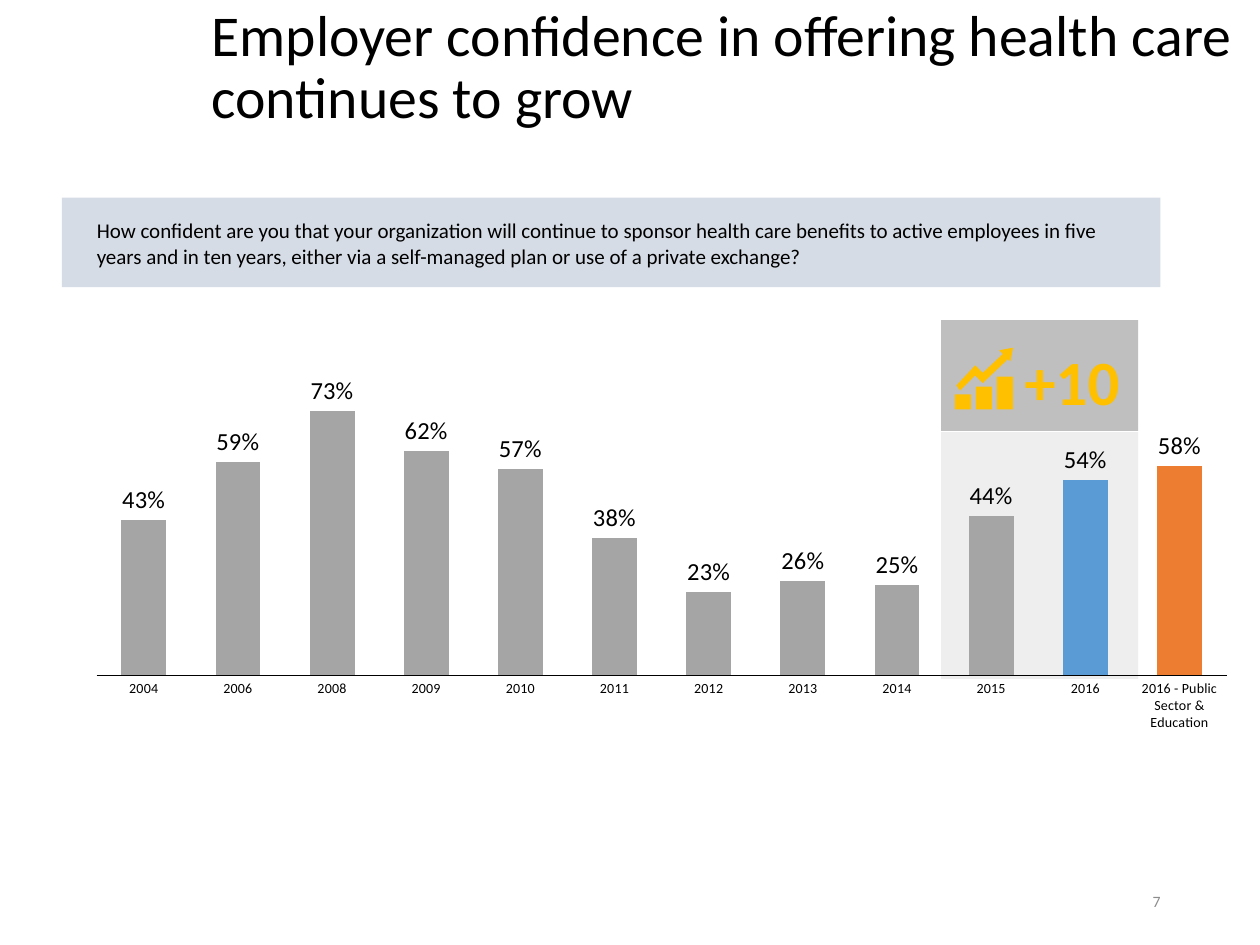
from dataclasses import dataclass

import pptx
import pptx.chart.data
import pptx.dml.color
import pptx.enum.chart
import pptx.enum.shapes
import pptx.enum.text
import pptx.oxml
import pptx.util
from pptx.util import Pt

FONT = "Calibri"
BLACK, GRAY, GOLD = "000000", "A5A5A5", "FFC000"
ALIGN = pptx.enum.text.PP_ALIGN
ANCHOR = pptx.enum.text.MSO_ANCHOR


@dataclass
class Area:
    left: float
    top: float
    width: float
    height: float

    def lengths(self):
        return Pt(self.left), Pt(self.top), Pt(self.width), Pt(self.height)


@dataclass
class TextStyle:
    size: float
    color: str = BLACK
    bold: bool = False
    align: ALIGN = ALIGN.LEFT
    anchor: ANCHOR = ANCHOR.TOP
    line_spacing: float = 1.0


def rgb(color: str):
    return pptx.dml.color.RGBColor.from_string(color)


def paint(shape, color: str):
    shape.shadow.inherit = False
    shape.fill.solid()
    shape.fill.fore_color.rgb = rgb(color)
    shape.line.fill.background()


def add_rectangle(page, area: Area, color: str):
    box = page.shapes.add_shape(pptx.enum.shapes.MSO_SHAPE.RECTANGLE, *area.lengths())
    paint(box, color)
    return box


def write(box, text: str, style: TextStyle):
    frame = box.text_frame
    frame.word_wrap = True
    frame.vertical_anchor = style.anchor
    para = frame.paragraphs[0]
    para.text = text
    para.alignment = style.align
    para.line_spacing = style.line_spacing
    set_font(para.font, style.size, style.color)
    para.font.bold = style.bold


def set_font(font, size: float, color: str = BLACK):
    font.name = FONT
    font.size = Pt(size)
    font.color.rgb = rgb(color)


def add_text(page, area: Area, text: str, style: TextStyle):
    write(page.shapes.add_textbox(*area.lengths()), text, style)


def add_question(page):
    banner = add_rectangle(page, Area(35.28, 113, 627.84, 51.1), "D6DCE5")
    frame = banner.text_frame
    frame.margin_left = frame.margin_right = Pt(20)
    frame.margin_top, frame.margin_bottom = Pt(11.5), Pt(8.6)
    write(
        banner,
        "How confident are you that your organization will continue to sponsor health care "
        "benefits to active employees in five years and in ten years, either via a "
        "self-managed plan or use of a private exchange?",
        TextStyle(12),
    )


def set_plot_area(chart, x: float, y: float, width: float, height: float):
    """Fix the inner plot area, as fractions of the chart."""
    plot_area = chart._chartSpace.chart.plotArea
    for old in plot_area.findall(pptx.oxml.ns.qn("c:layout")):
        plot_area.remove(old)
    plot_area.insert(0, pptx.oxml.parse_xml(
        f'<c:layout {pptx.oxml.ns.nsdecls("c")}><c:manualLayout>'
        '<c:layoutTarget val="inner"/><c:xMode val="edge"/><c:yMode val="edge"/>'
        f'<c:x val="{x}"/><c:y val="{y}"/><c:w val="{width}"/><c:h val="{height}"/>'
        "</c:manualLayout></c:layout>"
    ))


def add_confidence_chart(page):
    confidence = {
        "2004": 0.43, "2006": 0.59, "2008": 0.73, "2009": 0.62,
        "2010": 0.57, "2011": 0.38, "2012": 0.23, "2013": 0.26,
        "2014": 0.25, "2015": 0.44, "2016": 0.54,
        "2016 - Public Sector & Education": 0.58,
    }
    highlights = {10: "5B9BD5", 11: "ED7D31"}

    data = pptx.chart.data.CategoryChartData(number_format="0%")
    data.categories = list(confidence)
    data.add_series("Series 1", list(confidence.values()))
    chart = page.shapes.add_chart(
        pptx.enum.chart.XL_CHART_TYPE.COLUMN_CLUSTERED,
        *Area(28.08, 182.88, 679.68, 236.16).lengths(),
        data,
    ).chart
    chart.has_legend = False
    chart.has_title = False
    set_font(chart.font, 14)
    set_plot_area(chart, 0.04, 0.16, 0.95, 0.7)

    values = chart.value_axis
    values.minimum_scale, values.maximum_scale, values.major_unit = 0, 0.8, 0.2
    values.has_major_gridlines = False
    values.visible = False

    years = chart.category_axis
    years.major_tick_mark = pptx.enum.chart.XL_TICK_MARK.NONE
    years.format.line.color.rgb = rgb(BLACK)
    years.format.line.width = Pt(0.75)
    set_font(years.tick_labels.font, 8)

    plot = chart.plots[0]
    plot.gap_width = 110
    plot.vary_by_categories = False
    plot.has_data_labels = True
    labels = plot.data_labels
    labels.show_value = True
    labels.number_format = "0%"
    labels.number_format_is_linked = False
    labels.position = pptx.enum.chart.XL_LABEL_POSITION.OUTSIDE_END
    set_font(labels.font, 14)

    series = plot.series[0]
    series.format.fill.solid()
    series.format.fill.fore_color.rgb = rgb(GRAY)
    for index, color in highlights.items():
        fill = series.points[index].format.fill
        fill.solid()
        fill.fore_color.rgb = rgb(color)


def add_growth_icon(page):
    baseline, bar_width = 234, 9.2
    for index, height in enumerate((8.6, 13, 18.7)):
        left = 545.6 + 12 * index
        add_rectangle(page, Area(left, baseline - height, bar_width, height), GOLD)

    arrow = [
        (557.3, 208.8), (561.6, 213.1), (573.1, 202.3), (571, 200.2), (578.9, 198.7),
        (577.4, 206.6), (576, 205.2), (561.6, 218.9), (557.3, 214.6), (548.6, 223.2),
        (546.5, 220.3),
    ]
    points = [(Pt(x), Pt(y)) for x, y in arrow]
    builder = page.shapes.build_freeform(*points[0])
    builder.add_line_segments(points[1:], close=True)
    paint(builder.convert_to_shape(), GOLD)


def main():
    deck = pptx.Presentation()
    deck.slide_width, deck.slide_height = Pt(720), Pt(540)
    page = deck.slides.add_slide(deck.slide_layouts[6])

    add_rectangle(page, Area(537.84, 182.88, 112.6, 63.4), "BFBFBF")
    add_rectangle(page, Area(537.84, 246.9, 112.6, 141.1), "EEEEEE")
    add_confidence_chart(page)
    add_text(
        page, Area(113.8, -13, 620.6, 104.4),
        "Employer confidence in offering health care continues to grow",
        TextStyle(33, anchor=ANCHOR.MIDDLE, line_spacing=0.9),
    )
    add_text(
        page, Area(508.3, 500.4, 162, 28.8), "7",
        TextStyle(9, "8C8C8C", align=ALIGN.RIGHT, anchor=ANCHOR.MIDDLE),
    )
    add_question(page)
    add_growth_icon(page)
    add_text(page, Area(578.2, 192.2, 85, 51.1), "+10", TextStyle(36, GOLD, bold=True))

    deck.save("out.pptx")


if __name__ == "__main__":
    main()
